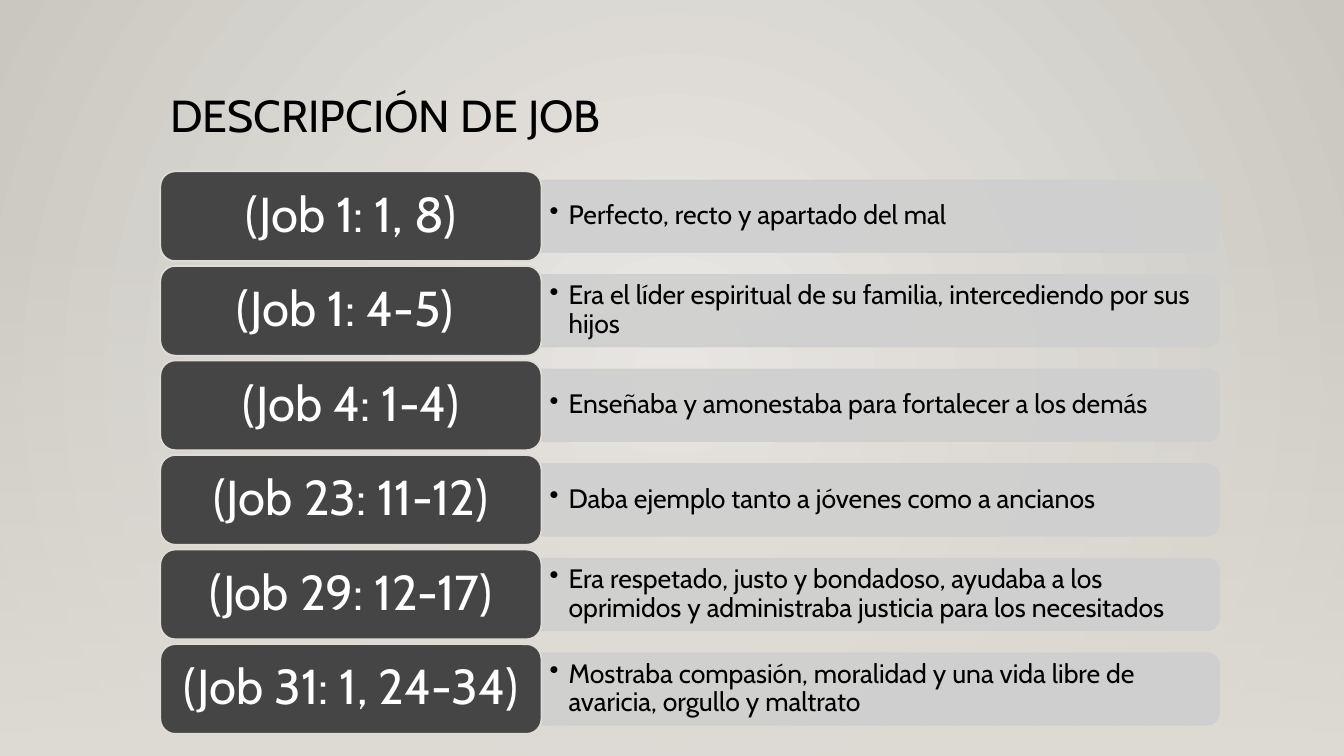
import pptx
import pptx.dml.color
import pptx.enum.shapes
import pptx.enum.text
import pptx.oxml
import pptx.oxml.ns
import pptx.util
from lxml import etree

Inches, Pt = pptx.util.Inches, pptx.util.Pt
SHAPES = pptx.enum.shapes.MSO_SHAPE
ALIGN = pptx.enum.text.PP_ALIGN
ANCHOR = pptx.enum.text.MSO_ANCHOR
qn = pptx.oxml.ns.qn

# Content
TITLE = "DESCRIPCIÓN DE JOB"
TRAITS = [
    ("(Job 1: 1, 8)", "Perfecto, recto y apartado del mal"),
    ("(Job 1: 4-5) ", "Era el líder espiritual de su familia, intercediendo por sus hijos"),
    ("(Job 4: 1-4)", "Enseñaba y amonestaba para fortalecer a los demás"),
    ("(Job 23: 11-12)", "Daba ejemplo tanto a jóvenes como a ancianos"),
    ("(Job 29: 12-17)", "Era respetado, justo y bondadoso, ayudaba a los oprimidos "
                        "y administraba justicia para los necesitados"),
    ("(Job 31: 1, 24-34)", "Mostraba compasión, moralidad y una vida libre de avaricia, "
                           "orgullo y maltrato"),
]

# Style and layout, in inches
FONT = "Cabin"
BLACK, WHITE, DARK, PALE, SAND = "000000", "FFFFFF", "454545", "CFCFCF", "DFDBD5"
SLIDE_W, SLIDE_H = 13.33, 7.5
LEFT, FIRST_TOP, LAST_TOP = 1.59, 1.7, 6.39
VERSE_W, VERSE_H = 3.78, 0.89
BAR_LENGTH, BAR_THICKNESS = 6.72, 0.71
DETAIL_W, DETAIL_H = 6.69, 0.64
INDENT = 0.19


def rgb(value):
    return pptx.dml.color.RGBColor.from_string(value)


def set_gradient(fill, props, stops, direction):
    """Give props a gradient of (position %, colour, opacity %) stops."""
    fill.gradient()
    gradient = props.find(qn("a:gradFill"))
    for child in list(gradient):
        gradient.remove(child)
    stop_list = etree.SubElement(gradient, qn("a:gsLst"))
    for position, value, opacity in stops:
        stop = etree.SubElement(stop_list, qn("a:gs"), pos=str(position * 1000))
        colour = etree.SubElement(stop, qn("a:srgbClr"), val=value)
        etree.SubElement(colour, qn("a:alpha"), val=str(opacity * 1000))
    gradient.append(pptx.oxml.parse_xml(direction))


def add_block(kind, left, top, width, height, colour, edge, opacity=100):
    block = slide.shapes.add_shape(
        kind, Inches(left), Inches(top), Inches(width), Inches(height))
    block.shadow.inherit = False
    block.fill.solid()
    block.fill.fore_color.rgb = rgb(colour)
    block.line.color.rgb = rgb(edge)
    block.line.width = Pt(1.25)
    if opacity < 100:
        for value in block._element.spPr.iter(qn("a:srgbClr")):
            etree.SubElement(value, qn("a:alpha"), val=str(opacity * 1000))
    return block


def add_box(left, top, width, height):
    return slide.shapes.add_textbox(
        Inches(left), Inches(top), Inches(width), Inches(height))


def write(box, text, size, colour, align, anchor, side, edge, bullet=False):
    frame = box.text_frame
    frame.word_wrap = True
    frame.vertical_anchor = anchor
    frame.margin_left = frame.margin_right = Inches(side)
    frame.margin_top = frame.margin_bottom = Inches(edge)
    frame.text = text
    paragraph = frame.paragraphs[0]
    paragraph.alignment = align
    paragraph.line_spacing = 0.9
    if bullet:
        props = paragraph._p.get_or_add_pPr()
        props.set("marL", str(Inches(INDENT)))
        props.set("indent", str(-Inches(INDENT)))
        etree.SubElement(props, qn("a:buChar"), char="•")
    font = paragraph.runs[0].font
    font.name, font.size = FONT, Pt(size)
    font.color.rgb = rgb(colour)


prs = pptx.Presentation()
prs.slide_width, prs.slide_height = Inches(SLIDE_W), Inches(SLIDE_H)
slide = prs.slides.add_slide(prs.slide_layouts[6])

# Background: radial glow, with a sand veil fading in downwards
A_NS = 'xmlns:a="http://schemas.openxmlformats.org/drawingml/2006/main"'
RADIAL = (f'<a:path {A_NS} path="circle">'
          '<a:fillToRect l="50000" t="50000" r="50000" b="50000"/></a:path>')
DOWNWARD = f'<a:lin {A_NS} ang="5400000" scaled="0"/>'
glow = slide.background.fill
glow.solid()
set_gradient(glow, slide._element.find(".//" + qn("p:bgPr")),
             [(0, "ECEAE7", 100), (100, "CAC7C1", 100)], RADIAL)
veil = add_block(SHAPES.RECTANGLE, 0, 2.21, SLIDE_W, SLIDE_H - 2.21, SAND, SAND)
veil.line.fill.background()
set_gradient(veil.fill, veil._element.spPr, [(0, SAND, 0), (100, SAND, 100)], DOWNWARD)

# Title
write(add_box(LEFT, 0.88, 10.5, 1.15), TITLE, 32, BLACK,
      ALIGN.LEFT, ANCHOR.TOP, 0.1, 0.05)

# One row per trait: bar turned on its side, detail, verse
pitch = (LAST_TOP - FIRST_TOP) / (len(TRAITS) - 1)
detail_left = LEFT + VERSE_W
for row, (verse, detail) in enumerate(TRAITS):
    top = FIRST_TOP + row * pitch
    middle = top + VERSE_H / 2
    bar = add_block(SHAPES.ROUND_2_SAME_RECTANGLE,
                    detail_left + (BAR_LENGTH - BAR_THICKNESS) / 2,
                    middle - BAR_LENGTH / 2,
                    BAR_THICKNESS, BAR_LENGTH, PALE, PALE, 90)
    bar.rotation = 90
    write(add_box(detail_left, middle - DETAIL_H / 2, DETAIL_W, DETAIL_H),
          detail, 19, BLACK, ALIGN.LEFT, ANCHOR.MIDDLE, 0.08, 0.04, bullet=True)
    verse_block = add_block(SHAPES.ROUNDED_RECTANGLE, LEFT, top,
                            VERSE_W, VERSE_H, DARK, SAND)
    write(verse_block, verse, 35, WHITE, ALIGN.CENTER, ANCHOR.MIDDLE, 0.15, 0.07)

prs.save("out.pptx")
